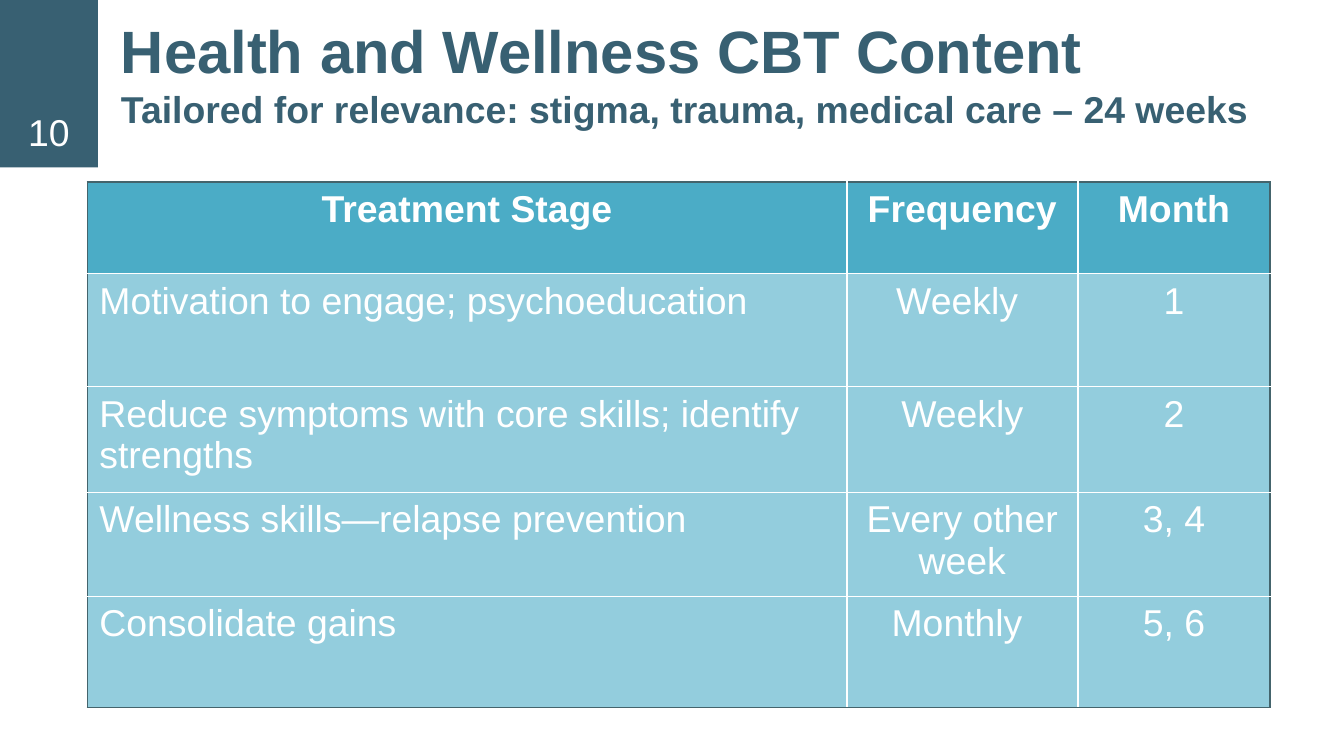
import dataclasses
import typing

import pptx
import pptx.dml.color
import pptx.enum.shapes
import pptx.enum.text
import pptx.oxml
import pptx.oxml.ns
import pptx.util

WIDE = pptx.util.Inches(10)
HIGH = WIDE * 9 // 16
FONT = "Arial"
SLATE, EDGE, WHITE = "386072", "44646C", "FFFFFF"
TEAL, PALE = "4BACC6", "93CDDD"
CENTER = pptx.enum.text.PP_ALIGN.CENTER
LEFT = pptx.enum.text.PP_ALIGN.LEFT
BOTTOM = pptx.enum.text.MSO_ANCHOR.BOTTOM


@dataclasses.dataclass
class Box:
    left: float
    top: float
    width: float
    height: float

    def place(self) -> tuple[int, int, int, int]:
        return across(self.left), down(self.top), across(self.width), down(self.height)


@dataclasses.dataclass
class Stage:
    label: str
    pace: str
    month: str
    height: float
    fill: str = PALE
    bold: bool = False


BAND = Box(0, 0, 7.3, 22.15)
TITLE = Box(8, 3.78, 90, 15.3)
GRID = Box(6.5, 24.1, 88, 69.5)
COLUMNS = [56.5, 17.2, 14.3]
STAGES = [
    Stage("Treatment Stage", "Frequency", "Month", 12.1, TEAL, True),
    Stage("Motivation to engage; psychoeducation", "Weekly ", "1", 14.95),
    Stage("Reduce symptoms with core skills; identify strengths", "Weekly", "2", 14),
    Stage("Wellness skills—relapse prevention", "Every other week", "3, 4", 13.75),
    Stage("Consolidate gains", "Monthly ", "5, 6", 14.7),
]


def across(share: float) -> int:
    return round(WIDE * share / 100)


def down(share: float) -> int:
    return round(HIGH * share / 100)


def color(code: str) -> pptx.dml.color.RGBColor:
    return pptx.dml.color.RGBColor.from_string(code)


def paint(thing: typing.Any, code: str) -> None:
    thing.fill.solid()
    thing.fill.fore_color.rgb = color(code)


def write(line: typing.Any, text: str, size: float, code: str, bold: bool = False) -> None:
    run = line.add_run()
    run.text = text
    run.font.name = FONT
    run.font.size = pptx.util.Pt(size)
    run.font.bold = bold
    run.font.color.rgb = color(code)


def inset(frame: typing.Any) -> None:
    frame.word_wrap = True
    frame.auto_size = pptx.enum.text.MSO_AUTO_SIZE.NONE
    frame.vertical_anchor = BOTTOM
    frame.margin_left = frame.margin_right = pptx.util.Inches(0.1)
    frame.margin_top = frame.margin_bottom = pptx.util.Inches(0.1)


def border(cell: typing.Any, sides: dict[str, str]) -> None:
    props = cell._tc.get_or_add_tcPr()
    for spot, (side, code) in enumerate(sides.items()):
        props.insert(spot, pptx.oxml.parse_xml(
            f'<a:ln{side} {pptx.oxml.ns.nsdecls("a")} w="12700">'
            f'<a:solidFill><a:srgbClr val="{code}"/></a:solidFill></a:ln{side}>'
        ))


def add_title(slide: typing.Any) -> None:
    title = slide.shapes.title
    title.left, title.top, title.width, title.height = TITLE.place()
    inset(title.text_frame)
    line = title.text_frame.paragraphs[0]
    line.alignment = LEFT
    write(line, "Health and Wellness CBT Content", 32, SLATE, True)
    line.add_line_break()
    write(line, "Tailored for relevance: stigma, trauma, medical care – 24 weeks", 20, SLATE, True)


def add_band(slide: typing.Any) -> None:
    band = slide.shapes.add_shape(pptx.enum.shapes.MSO_SHAPE.RECTANGLE, *BAND.place())
    band.shadow.inherit = False
    paint(band, SLATE)
    band.line.fill.background()
    inset(band.text_frame)
    line = band.text_frame.paragraphs[0]
    line.alignment = CENTER
    write(line, "10", 20, WHITE)


def add_grid(slide: typing.Any) -> None:
    table = slide.shapes.add_table(len(STAGES), len(COLUMNS), *GRID.place()).table
    table.horz_banding = False
    for column, width in zip(table.columns, COLUMNS):
        column.width = across(width)
    last_row, last_col = len(STAGES) - 1, len(COLUMNS) - 1
    for row, stage in enumerate(STAGES):
        table.rows[row].height = down(stage.height)
        for col, text in enumerate((stage.label, stage.pace, stage.month)):
            cell = table.cell(row, col)
            cell.margin_left = cell.margin_right = pptx.util.Inches(0.09)
            cell.margin_top = cell.margin_bottom = pptx.util.Inches(0.05)
            paint(cell, stage.fill)
            border(cell, {
                "L": EDGE if col == 0 else WHITE,
                "R": EDGE if col == last_col else WHITE,
                "T": EDGE if row == 0 else WHITE,
                "B": EDGE if row == last_row else WHITE,
            })
            line = cell.text_frame.paragraphs[0]
            line.alignment = CENTER if col or row == 0 else LEFT
            write(line, text, 20, WHITE, stage.bold)


def main() -> None:
    deck = pptx.Presentation()
    deck.slide_width, deck.slide_height = WIDE, HIGH
    slide = deck.slides.add_slide(deck.slide_layouts[5])
    add_band(slide)
    add_title(slide)
    add_grid(slide)
    deck.save("out.pptx")


if __name__ == "__main__":
    main()
